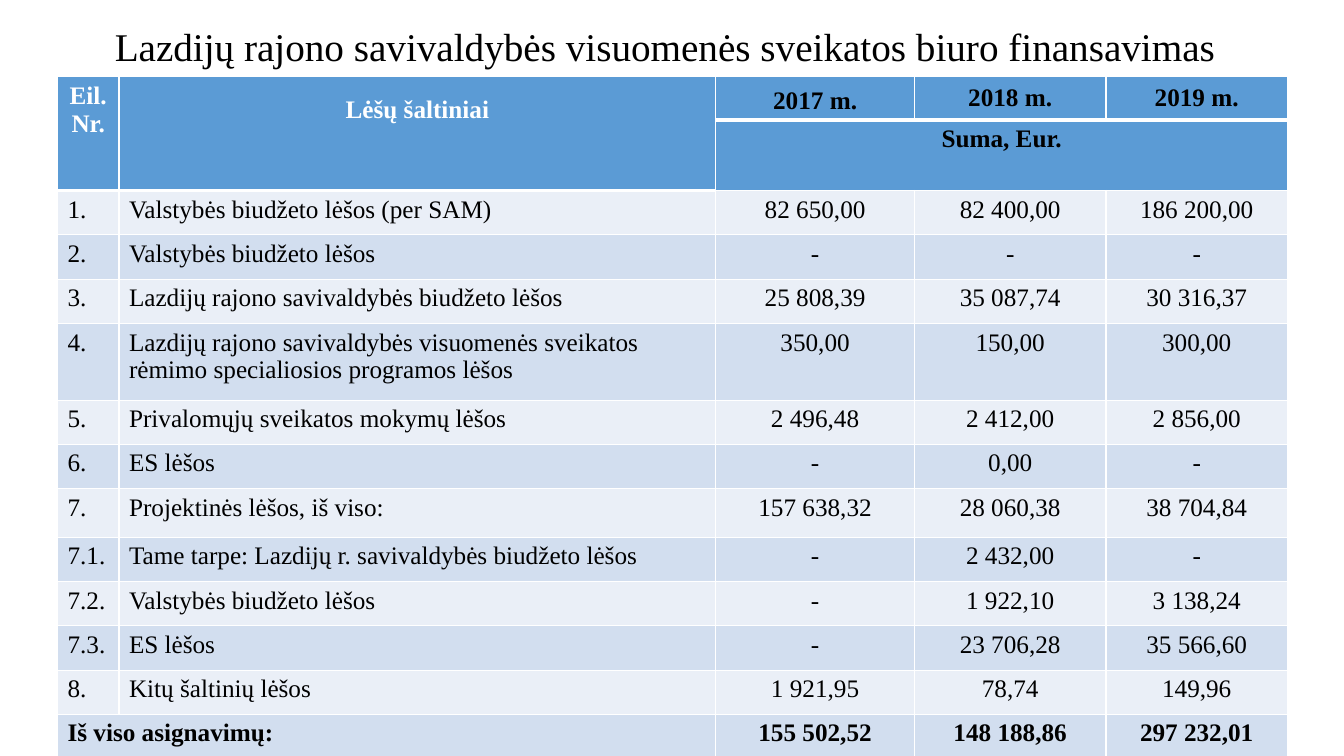
from dataclasses import dataclass
from lxml.etree import fromstring
from pptx import Presentation
from pptx.dml.color import RGBColor
from pptx.enum.text import MSO_ANCHOR, PP_ALIGN
from pptx.oxml.ns import nsdecls
from pptx.util import Inches, Pt


@dataclass(frozen=True)
class Theme:
    font: str = "Times New Roman"
    title_size: int = 28
    table_size: int = 18
    dark: str = "000000"
    light: str = "FFFFFF"
    header: str = "5B9BD5"
    bands: tuple = ("EAEFF7", "D2DEEF")
    thin: int = 1
    thick: int = 3


class SlideBuilder:
    def __init__(self, prs, theme):
        self.theme = theme
        self.slide = prs.slides.add_slide(prs.slide_layouts[6])

    def set_text(self, tf, text, size, color, bold=False, align=PP_ALIGN.LEFT, spacing=None):
        tf.text = text
        p = tf.paragraphs[0]
        p.alignment = align
        if spacing:
            p.line_spacing = spacing
        for r in p.runs:
            r.font.name, r.font.size, r.font.bold = self.theme.font, Pt(size), bold
            r.font.color.rgb = RGBColor.from_string(color)

    def title(self, text, left, top, width, height):
        box = self.slide.shapes.add_textbox(*map(Inches, (left, top, width, height)))
        tf = box.text_frame
        tf.word_wrap = True
        tf.vertical_anchor = MSO_ANCHOR.MIDDLE
        self.set_text(tf, text, self.theme.title_size, self.theme.dark,
                      align=PP_ALIGN.CENTER, spacing=0.9)

    def table(self, left, top, widths, heights):
        frame = self.slide.shapes.add_table(
            len(heights), len(widths),
            *map(Inches, (left, top, sum(widths), sum(heights))))
        table = frame.table
        table.first_row = table.horz_banding = False
        for col, width in zip(table.columns, widths):
            col.width = Inches(width)
        for row, height in zip(table.rows, heights):
            row.height = Inches(height)
        return table

    def cell(self, cell, text, fill, color=None, bold=False, align=PP_ALIGN.CENTER,
             anchor=MSO_ANCHOR.TOP, spacing=None, thick_sides=""):
        self.set_text(cell.text_frame, text, self.theme.table_size,
                      color or self.theme.dark, bold, align, spacing)
        cell.vertical_anchor = anchor
        cell.fill.solid()
        cell.fill.fore_color.rgb = RGBColor.from_string(fill)
        # Border elements come before the fill
        tc_pr = cell._tc.get_or_add_tcPr()
        for i, side in enumerate("LRTB"):
            width = self.theme.thick if side in thick_sides else self.theme.thin
            tc_pr.insert(i, fromstring(
                f'<a:ln{side} {nsdecls("a")} w="{Pt(width)}"><a:solidFill>'
                f'<a:srgbClr val="{self.theme.light}"/></a:solidFill></a:ln{side}>'))


TITLE = "Lazdijų rajono savivaldybės visuomenės sveikatos biuro finansavimas"
YEARS = ["2017 m.", "2018 m.", "2019 m."]
FUNDS = [
    ("1.", "Valstybės biudžeto lėšos (per SAM)", "82 650,00", "82 400,00", "186 200,00"),
    ("2.", "Valstybės biudžeto lėšos", "-", "-", "-"),
    ("3.", "Lazdijų rajono savivaldybės biudžeto lėšos", "25 808,39", "35 087,74", "30 316,37"),
    ("4.", "Lazdijų rajono savivaldybės visuomenės sveikatos rėmimo specialiosios programos lėšos",
     "350,00", "150,00", "300,00"),
    ("5.", "Privalomųjų sveikatos mokymų lėšos", "2 496,48", "2 412,00", "2 856,00"),
    ("6.", "ES lėšos", "-", "0,00", "-"),
    ("7.", "Projektinės lėšos, iš viso:", "157 638,32", "28 060,38", "38 704,84"),
    ("7.1.", "Tame tarpe: Lazdijų r. savivaldybės biudžeto lėšos", "-", "2 432,00", "-"),
    ("7.2.", "Valstybės biudžeto lėšos", "-", "1 922,10", "3 138,24"),
    ("7.3.", "ES lėšos", "-", "23 706,28", "35 566,60"),
    ("8.", "Kitų šaltinių lėšos", "1 921,95", "78,74", "149,96"),
    ("Iš viso asignavimų:", "", "155 502,52", "148 188,86", "297 232,01"),
]
COL_WIDTHS = [0.61, 5.92, 1.97, 1.9, 1.8]
ROW_HEIGHTS = [0.43, 0.65] + [0.44] * len(FUNDS)
ROW_HEIGHTS[5] = 0.76  # two-line fund name
ROW_HEIGHTS[8] = 0.48  # project funds


def main():
    prs = Presentation()
    prs.slide_width, prs.slide_height = Inches(13.33), Inches(7.5)
    theme = Theme()
    s = SlideBuilder(prs, theme)
    s.title(TITLE, 0.15, 0.21, 12.89, 0.55)
    table = s.table(0.57, 0.76, COL_WIDTHS, ROW_HEIGHTS)

    # Header: two tall cells, then the years above one shared cell
    for col, (text, spacing) in enumerate([("Eil. Nr.", None), ("Lėšų šaltiniai", 1.5)]):
        s.cell(table.cell(0, col), text, theme.header, theme.light, True,
               spacing=spacing, thick_sides="B")
        s.cell(table.cell(1, col), "", theme.header, thick_sides="B")
        table.cell(0, col).merge(table.cell(1, col))
    for col, year in enumerate(YEARS, 2):
        anchor = MSO_ANCHOR.BOTTOM if col == 2 else MSO_ANCHOR.MIDDLE
        s.cell(table.cell(0, col), year, theme.header, bold=True, anchor=anchor, thick_sides="B")
        s.cell(table.cell(1, col), "Suma, Eur." if col == 2 else "", theme.header,
               bold=True, thick_sides="T")
    table.cell(1, 2).merge(table.cell(1, 4))

    # Banded funding rows, the total in bold
    for i, fund in enumerate(FUNDS):
        for col, text in enumerate(fund):
            s.cell(table.cell(i + 2, col), text, theme.bands[i % 2],
                   bold=fund is FUNDS[-1],
                   align=PP_ALIGN.LEFT if col < 2 else PP_ALIGN.CENTER,
                   thick_sides="T" if i == 0 and col < 2 else "")
    last = len(ROW_HEIGHTS) - 1
    table.cell(last, 0).merge(table.cell(last, 1))

    prs.save("out.pptx")


if __name__ == "__main__":
    main()
